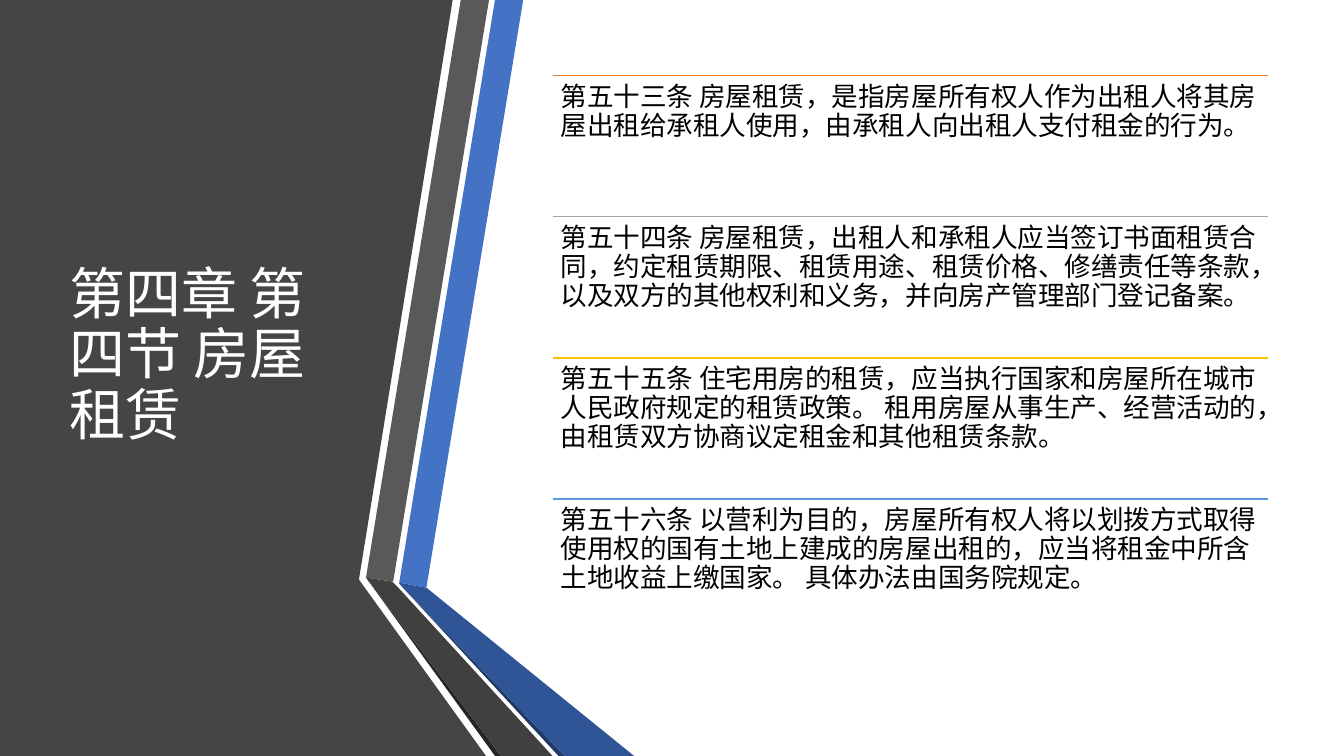
import pptx
import pptx.util
import pptx.dml.color
import pptx.enum.shapes
import pptx.enum.text
import pptx.oxml.ns
import lxml.etree

TITLE = "第四章 第四节 房屋租赁"
ARTICLES = [
    ("orange", "第五十三条 房屋租赁，是指房屋所有权人作为出租人将其房屋出租给承租人使用，由承租人向出租人支付租金的行为。"),
    ("silver", "第五十四条 房屋租赁，出租人和承租人应当签订书面租赁合同，约定租赁期限、租赁用途、租赁价格、修缮责任等条款，以及双方的其他权利和义务，并向房产管理部门登记备案。"),
    ("gold", "第五十五条 住宅用房的租赁，应当执行国家和房屋所在城市人民政府规定的租赁政策。 租用房屋从事生产、经营活动的，由租赁双方协商议定租金和其他租赁条款。"),
    ("sky", "第五十六条 以营利为目的，房屋所有权人将以划拨方式取得使用权的国有土地上建成的房屋出租的，应当将租金中所含土地收益上缴国家。 具体办法由国务院规定。"),
]
COLOURS = {
    "white": "FFFFFF", "black": "000000", "panel": "454545",
    "blue": "4472C4", "grey": "595959", "grey_edge": "262626",
    "blue_edge": "203864", "blue_fold": "2F5597", "grey_fold": "404040",
    "orange": "ED7D31", "silver": "A5A5A5", "gold": "FFC000", "sky": "5B9BD5",
}
FONT = "Noto Sans CJK SC"
WIDTH, HEIGHT = 13.33, 7.5
MARGIN = HEIGHT / 10
LIST_LEFT, LIST_WIDTH = 5.48, 7.1
ROW_HEIGHT = 1.4
RIBBONS = [
    ("panel", [(0, 0), (4.49, 0), (3.56, 5.75), (4.82, HEIGHT), (0, HEIGHT)]),
    ("blue", [(3.96, 5.78), (4.23, 5.83), (5.19, 0), (4.91, 0)]),
    ("grey", [(4.85, 0), (4.57, 0), (3.63, 5.73), (3.9, 5.77)]),
    ("grey_edge", [(3.63, 5.73), (4.91, HEIGHT), (4.97, HEIGHT)]),
    ("blue_edge", [(3.96, 5.79), (5.54, HEIGHT), (5.6, HEIGHT)]),
    ("blue_fold", [(3.96, 5.78), (3.96, 5.79), (5.6, HEIGHT), (6.29, HEIGHT), (4.23, 5.83)]),
    ("grey_fold", [(3.63, 5.73), (4.97, HEIGHT), (5.48, HEIGHT), (3.95, 5.83), (3.89, 5.77)]),
]


def inches(*values):
    return [pptx.util.Inches(value) for value in values]


def colour(name):
    return pptx.dml.color.RGBColor.from_string(COLOURS[name])


def add_ribbon(slide, name, points):
    corners = [inches(*point) for point in points]
    builder = slide.shapes.build_freeform(*corners[0])
    builder.add_line_segments(corners[1:], close=True)
    shape = builder.convert_to_shape()
    shape.shadow.inherit = False
    shape.fill.solid()
    shape.fill.fore_color.rgb = colour(name)
    shape.line.fill.background()


def add_text(slide, text, box, size, name, anchor, inset):
    shape = slide.shapes.add_textbox(*inches(*box))
    frame = shape.text_frame
    frame.word_wrap = True
    frame.vertical_anchor = anchor
    frame.margin_left, frame.margin_right = inches(inset, inset)
    frame.margin_top, frame.margin_bottom = inches(inset, inset)
    frame.text = text
    paragraph = frame.paragraphs[0]
    paragraph.line_spacing = 0.9
    font = paragraph.runs[0].font
    font.size = pptx.util.Pt(size)
    font.name = FONT
    font.color.rgb = colour(name)
    properties = paragraph.runs[0]._r.get_or_add_rPr()
    lxml.etree.SubElement(properties, pptx.oxml.ns.qn("a:ea"), typeface=FONT)


def add_rule(slide, name, top):
    line = slide.shapes.add_connector(
        pptx.enum.shapes.MSO_CONNECTOR.STRAIGHT,
        *inches(LIST_LEFT, top, LIST_LEFT + LIST_WIDTH, top))
    line.line.color.rgb = colour(name)
    line.line.width = pptx.util.Pt(1)
    lxml.etree.SubElement(line._element.spPr, pptx.oxml.ns.qn("a:effectLst"))


def main():
    presentation = pptx.Presentation()
    presentation.slide_width, presentation.slide_height = inches(WIDTH, HEIGHT)
    slide = presentation.slides.add_slide(presentation.slide_layouts[6])
    anchors = pptx.enum.text.MSO_ANCHOR
    for name, points in RIBBONS:
        add_ribbon(slide, name, points)
    add_text(slide, TITLE, (0.59, MARGIN, 3.04, 5.58), 40, "white", anchors.MIDDLE, 0.1)
    for row, (name, text) in enumerate(ARTICLES):
        top = MARGIN + row * ROW_HEIGHT
        add_rule(slide, name, top)
        add_text(slide, text, (LIST_LEFT, top, LIST_WIDTH, ROW_HEIGHT), 19, "black", anchors.TOP, 0.08)
    presentation.save("out.pptx")


if __name__ == "__main__":
    main()
